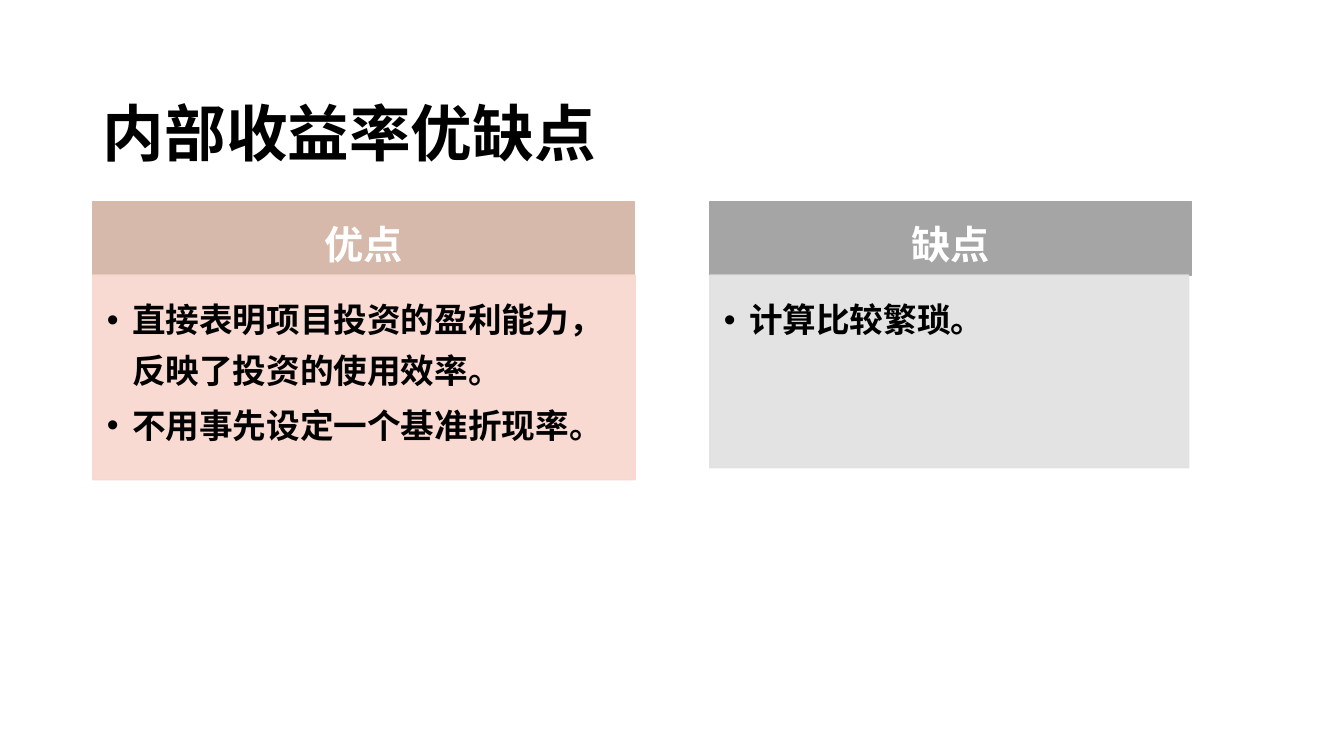
from lxml.etree import SubElement
from pptx import Presentation
from pptx.dml.color import RGBColor
from pptx.enum.text import MSO_ANCHOR as Anchor, MSO_AUTO_SIZE as Fit, PP_ALIGN as Align
from pptx.oxml.ns import qn
from pptx.util import Inches, Pt


def paint(fmt, tone):
    fmt.solid()
    fmt.fore_color.rgb = RGBColor.from_string(tone)


def put(shape, box, lines, size, tone, anchor, pads, para):
    """Place a placeholder and fill it with bold paragraphs."""
    for name, value in zip(("left", "top", "width", "height"), box):
        setattr(shape, name, Inches(value))
    frame = shape.text_frame
    frame.text = "\n".join(lines)
    form = {"word_wrap": True, "auto_size": Fit.NONE, "vertical_anchor": anchor}
    for side, pad in zip(("left", "top", "right", "bottom"), pads):
        form["margin_" + side] = Inches(pad)
    for name, value in form.items():
        setattr(frame, name, value)
    for item in frame.paragraphs:
        for name, value in {"space_before": Pt(0), **para}.items():
            setattr(item, name, value)
        font = item.runs[0].font
        for name, value in {"name": "Times New Roman", "size": Pt(size), "bold": True}.items():
            setattr(font, name, value)
        paint(font.fill, tone)


deck = Presentation()
deck.slide_width, deck.slide_height = Inches(13.33), Inches(7.5)
slide = deck.slides.add_slide(deck.slide_layouts.get_by_name("Comparison"))
title, *parts = slide.placeholders

put(title, (0.92, 0.4, 11.5, 1.45), ["内部收益率优缺点"], 44, "000000", Anchor.MIDDLE,
    (0.1, 0.05, 0.1, 0.05), {"alignment": Align.JUSTIFY, "line_spacing": 1.5})

top, bar = 2, 0.73
head_form = {"alignment": Align.CENTER, "line_spacing": 1.25, "space_after": Pt(9.8)}
list_form = {"alignment": Align.LEFT, "line_spacing": 1.25, "space_after": Pt(3.6)}
# left, heading width, list width, list height, heading fill, list fill, heading, points
panels = [
    (0.92, 5.37, 5.38, 2.03, "D7B9AB", "F8D7CE", "优点",
     ["直接表明项目投资的盈利能力，反映了投资的使用效率。", "不用事先设定一个基准折现率。"]),
    (7.04, 4.78, 4.75, 1.91, "A5A5A5", "E1E1E1", "缺点", ["计算比较繁琐。"]),
]
for panel, head, body in zip(panels, parts[::2], parts[1::2]):
    left, head_w, body_w, body_h, dark, light, label, points = panel
    for shape, tone in ((head, dark), (body, light)):
        paint(shape.fill, tone)
        paint(shape.line.fill, tone)
        shape.line.width = Pt(1)
    for color in body._element.iter(qn("a:srgbClr")):
        SubElement(color, qn("a:alpha"), val="90000")
    put(head, (left, top, head_w, bar), [label], 28, "FFFFFF", Anchor.MIDDLE,
        (0.22, 0.12, 0.22, 0.12), head_form)
    put(body, (left, top + bar, body_w, body_h), points, 24, "000000", Anchor.TOP,
        (0.14, 0.14, 0.19, 0.21), list_form)
    for item in body.text_frame.paragraphs:
        props = item._p.get_or_add_pPr()
        props.set("marL", str(Inches(0.25)))
        props.set("indent", str(Inches(-0.25)))

deck.save("out.pptx")
